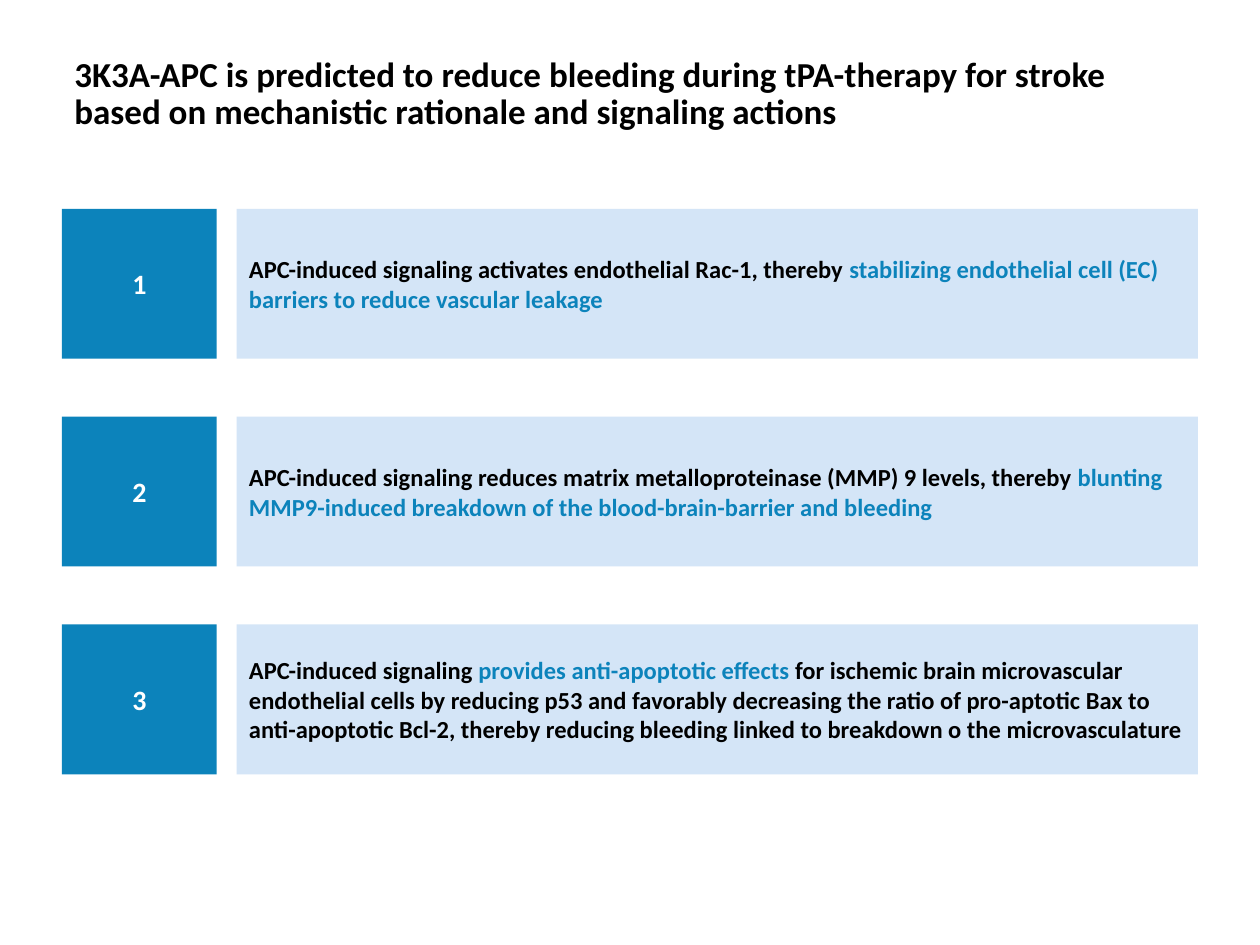
from pptx import Presentation
from pptx.dml.color import RGBColor
from pptx.enum import shapes, text
from pptx.util import Cm, Pt

BLUE = RGBColor(0x0C, 0x83, 0xBB)
PALE = RGBColor(0xD4, 0xE5, 0xF7)
BLACK = RGBColor(0, 0, 0)
WHITE = RGBColor(255, 255, 255)

LEFT, TOP, STEP = 1.25, 4.21, 4.19
NUM_W, BODY_X, BODY_W, ROW_H = 3.12, 4.77, 19.38, 3.02

TITLE = ("3K3A-APC is predicted to reduce bleeding during tPA-therapy for "
         "stroke based on mechanistic rationale and signaling actions")
POINTS = [
    [("APC-induced signaling activates endothelial Rac-1, thereby ", BLACK),
     ("stabilizing endothelial cell (EC) barriers to reduce vascular leakage",
      BLUE)],
    [("APC-induced signaling reduces matrix metalloproteinase (MMP) 9 levels, "
      "thereby ", BLACK),
     ("blunting MMP9-induced breakdown of the blood-brain-barrier and "
      "bleeding", BLUE)],
    [("APC-induced signaling ", BLACK),
     ("provides anti-apoptotic effects ", BLUE),
     ("for ischemic brain microvascular endothelial cells by reducing p53 and "
      "favorably decreasing the ratio of pro-aptotic Bax to anti-apoptotic "
      "Bcl-2, thereby reducing bleeding linked to breakdown o the "
      "microvasculature", BLACK)],
]


def style(run, size, color):
    font = run.font
    font.name = "Calibri"
    font.size = Pt(size)
    font.bold = True
    font.color.rgb = color


def add_title(slide):
    box = slide.shapes.add_textbox(Cm(LEFT), Cm(1.02), Cm(22.89), Cm(1.96))
    frame = box.text_frame
    frame.word_wrap = True
    frame.text = TITLE
    para = frame.paragraphs[0]
    para.line_spacing = 0.9
    style(para.runs[0], 20, BLACK)


def add_box(slide, left, top, width, fill, parts, size, align):
    box = slide.shapes.add_shape(shapes.MSO_SHAPE.RECTANGLE, Cm(left),
                                 Cm(top), Cm(width), Cm(ROW_H))
    box.shadow.inherit = False
    box.fill.solid()
    box.fill.fore_color.rgb = fill
    box.line.fill.background()
    frame = box.text_frame
    frame.word_wrap = True
    frame.vertical_anchor = text.MSO_ANCHOR.MIDDLE
    para = frame.paragraphs[0]
    para.alignment = align
    for words, color in parts:
        run = para.add_run()
        run.text = words
        style(run, size, color)


def main():
    deck = Presentation()
    deck.slide_width, deck.slide_height = Cm(25.4), Cm(19.05)
    slide = deck.slides.add_slide(deck.slide_layouts[6])
    add_title(slide)
    for row, parts in enumerate(POINTS):
        top = TOP + row * STEP
        add_box(slide, LEFT, top, NUM_W, BLUE, [(str(row + 1), WHITE)], 16,
                text.PP_ALIGN.CENTER)
        add_box(slide, BODY_X, top, BODY_W, PALE, parts, 14,
                text.PP_ALIGN.LEFT)
    deck.save("out.pptx")


if __name__ == "__main__":
    main()
